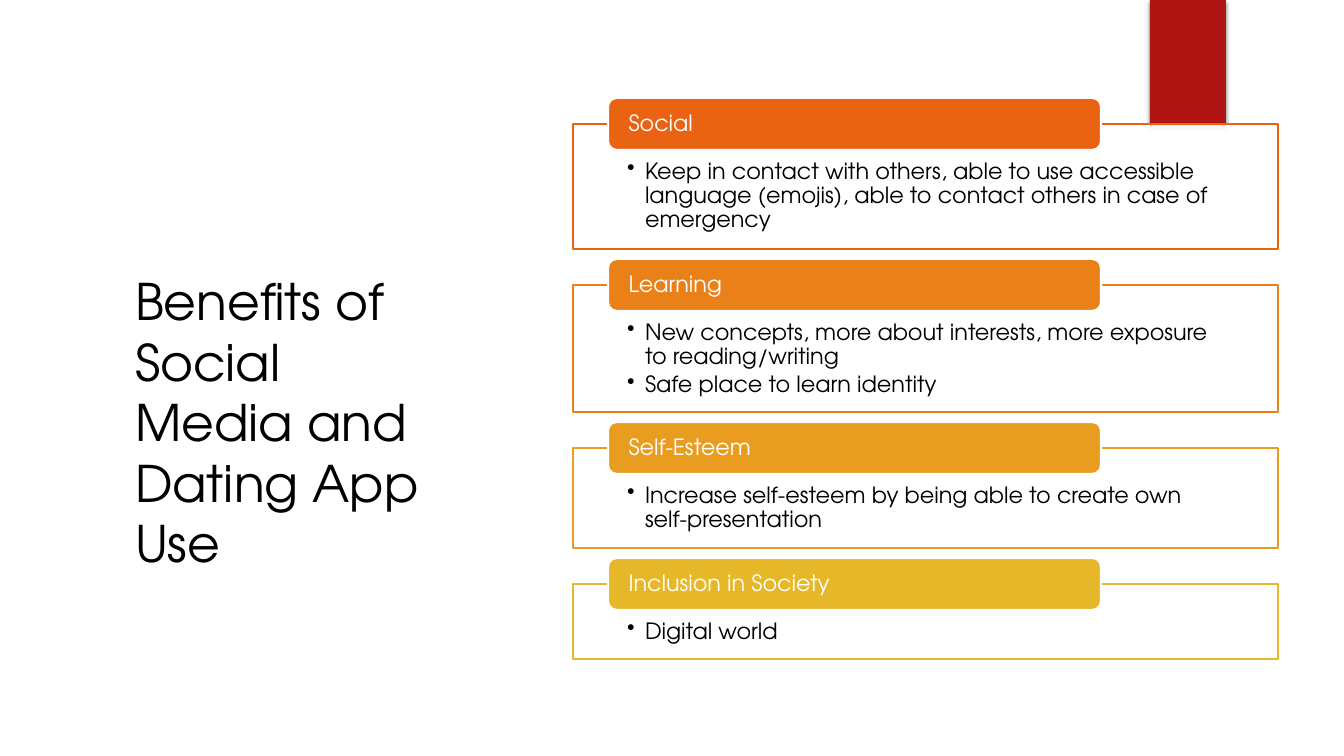
"""Build the slide on the benefits of social media and dating app use."""
from lxml import etree
from pptx import Presentation
from pptx import util as u
from pptx.dml.color import RGBColor
from pptx.enum import shapes, text
from pptx.oxml.ns import qn

PX = 914400 / 100.8
FONT = "TeX Gyre Adventor"
BLACK, WHITE, RIBBON = "000000", "FFFFFF", "B01513"

BENEFITS = [
    ("Social", "EA6312", 125, [
        "Keep in contact with others, able to use accessible language (emojis), "
        "able to contact others in case of emergency"]),
    ("Learning", "EA8118", 127, [
        "New concepts, more about interests, more exposure to reading/writing",
        "Safe place to learn identity"]),
    ("Self-Esteem", "E89D21", 100, [
        "Increase self-esteem by being able to create own self-presentation"]),
    ("Inclusion in Society", "E6B729", 75, ["Digital world"]),
]


def px(length):
    return u.Emu(round(length * PX))


def rgb(value):
    return RGBColor.from_string(value)


class BenefitsSlide:
    def __init__(self, deck):
        self.slide = deck.slides.add_slide(deck.slide_layouts[5])

    def add_words(self, paragraph, words, size, color):
        run = paragraph.add_run()
        run.text = words
        run.font.name = FONT
        run.font.size = u.Pt(size)
        run.font.color.rgb = rgb(color)

    def frame(self, holder, anchor, margins):
        frame = holder.text_frame
        frame.word_wrap = True
        frame.auto_size = text.MSO_AUTO_SIZE.NONE
        frame.vertical_anchor = anchor
        (frame.margin_left, frame.margin_top,
         frame.margin_right, frame.margin_bottom) = map(px, margins)
        return frame

    def title(self, words, left, top, width, height):
        heading = self.slide.shapes.title
        heading.left, heading.top = px(left), px(top)
        heading.width, heading.height = px(width), px(height)
        frame = self.frame(heading, text.MSO_ANCHOR.MIDDLE, (10, 5, 10, 5))
        paragraph = frame.paragraphs[0]
        paragraph.alignment = text.PP_ALIGN.LEFT
        self.add_words(paragraph, words, 36, BLACK)

    def block(self, kind, left, top, width, height, fill, line=None):
        block = self.slide.shapes.add_shape(
            kind, px(left), px(top), px(width), px(height))
        block.shadow.inherit = False
        block.fill.solid()
        block.fill.fore_color.rgb = rgb(fill)
        if line:
            block.line.color.rgb = rgb(line)
            block.line.width = u.Pt(1.5)
        else:
            block.line.fill.background()
        return block

    def ribbon(self, left, top, width, height):
        ribbon = self.block(shapes.MSO_SHAPE.RECTANGLE,
                            left, top, width, height, RIBBON)
        effects = ribbon._element.spPr.find(qn("a:effectLst"))
        shadow = etree.SubElement(effects, qn("a:outerShdw"), blurRad="38100",
                                  dist="25400", dir="5400000", rotWithShape="0")
        tint = etree.SubElement(shadow, qn("a:srgbClr"), val=BLACK)
        etree.SubElement(tint, qn("a:alpha"), val="45000")

    def panel(self, points, color, left, top, width, height):
        panel = self.block(shapes.MSO_SHAPE.RECTANGLE,
                           left, top, width, height, WHITE, color)
        tint = panel._element.spPr.find(qn("a:solidFill"))[0]
        etree.SubElement(tint, qn("a:alpha"), val="90000")
        frame = self.frame(panel, text.MSO_ANCHOR.TOP, (54, 36, 54, 12))
        for index, point in enumerate(points):
            paragraph = frame.add_paragraph() if index else frame.paragraphs[0]
            properties = paragraph._p.get_or_add_pPr()
            properties.set("marL", str(px(18)))
            properties.set("indent", str(-px(18)))
            etree.SubElement(properties, qn("a:buChar"), char="•")
            paragraph.alignment = text.PP_ALIGN.LEFT
            paragraph.line_spacing = 0.9
            paragraph.space_after = u.Pt(3)
            self.add_words(paragraph, point, 16, BLACK)

    def header(self, words, color, left, top, width, height):
        header = self.block(shapes.MSO_SHAPE.ROUNDED_RECTANGLE,
                            left, top, width, height, color, WHITE)
        frame = self.frame(header, text.MSO_ANCHOR.MIDDLE, (18, 0, 18, 0))
        paragraph = frame.paragraphs[0]
        paragraph.alignment = text.PP_ALIGN.LEFT
        paragraph.line_spacing = 0.9
        self.add_words(paragraph, words, 16, WHITE)


def main():
    deck = Presentation()
    deck.slide_width, deck.slide_height = px(1344), px(756)
    page = BenefitsSlide(deck)
    page.ribbon(1150, 0, 76, 126)
    page.title("Benefits of Social Media and Dating App Use", 125, 155, 325, 533)

    panel_top, gap, header_height = 124, 36, 52
    for benefit, color, height, points in BENEFITS:
        page.panel(points, color, 573, panel_top, 705, height)
        page.header(benefit, color, 608, panel_top - header_height // 2,
                    493, header_height)
        panel_top += height + gap
    deck.save("out.pptx")


if __name__ == "__main__":
    main()
